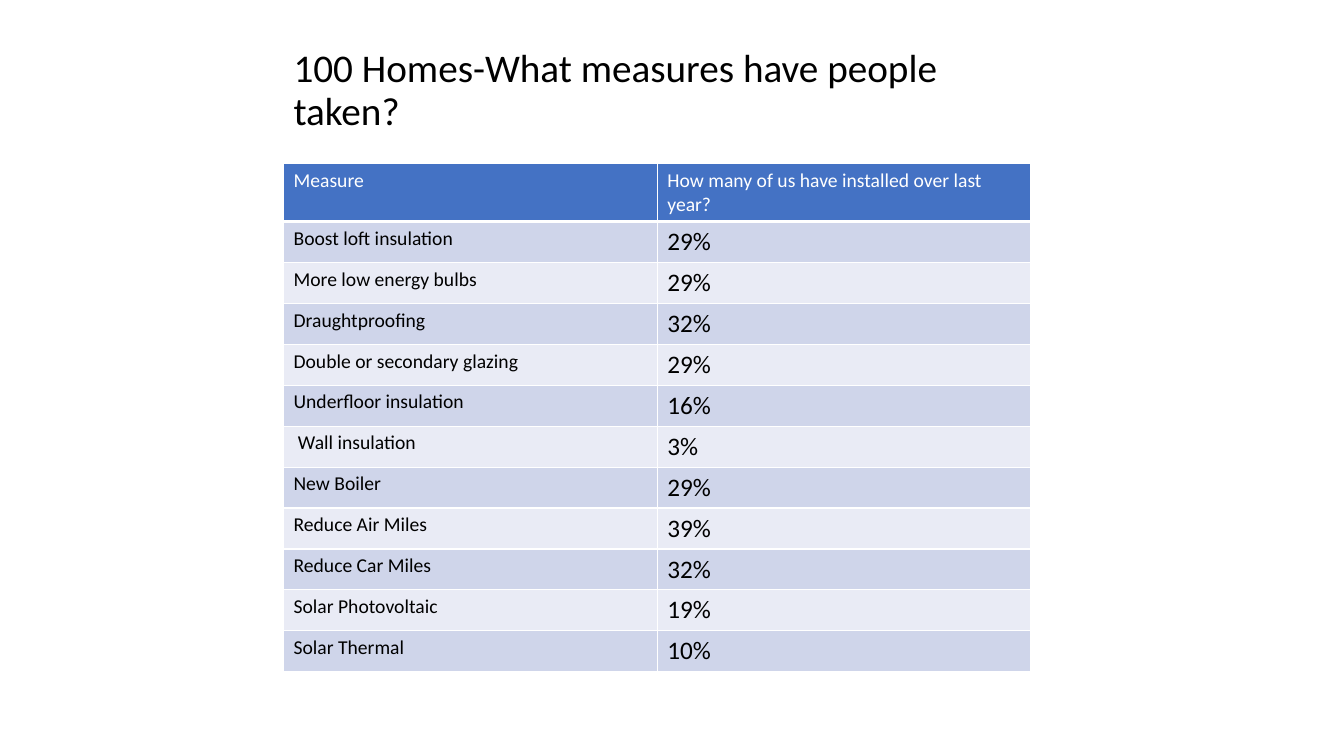
from dataclasses import dataclass

from lxml import etree
from pptx import Presentation
from pptx.dml.color import RGBColor
from pptx.enum.text import MSO_ANCHOR, MSO_AUTO_SIZE, PP_ALIGN
from pptx.oxml.ns import qn
from pptx.util import Emu, Pt

LEFT = PP_ALIGN.LEFT
TOP, MIDDLE = MSO_ANCHOR.TOP, MSO_ANCHOR.MIDDLE
NO_AUTOFIT = MSO_AUTO_SIZE.NONE

EMU_PER_PX = 9525
TITLE_ONLY = 5

TITLE = "100 Homes-What measures have people taken?"
HEADINGS = ("Measure", "How many of us have installed over last year?")
MEASURES = [
    ("Boost loft insulation", "29%"),
    ("More low energy bulbs", "29%"),
    ("Draughtproofing", "32%"),
    ("Double or secondary glazing", "29%"),
    ("Underfloor insulation", "16%"),
    (" Wall insulation", "3%"),
    ("New Boiler", "29%"),
    ("Reduce Air Miles", "39%"),
    ("Reduce Car Miles", "32%"),
    ("Solar Photovoltaic", "19%"),
    ("Solar Thermal", "10%"),
]


@dataclass(frozen=True)
class Theme:
    font: str = "Calibri"
    ink: str = "000000"
    white: str = "FFFFFF"
    header: str = "4472C4"
    bands: tuple = ("CFD5EA", "E9EBF5")
    title_size: int = 28
    label_size: int = 14
    value_size: int = 18
    rule: int = 1
    header_rule: int = 3


def px(length):
    return Emu(length * EMU_PER_PX)


def write_text(frame, text, *, font, size, color, spacing=1.0):
    para = frame.paragraphs[0]
    para.alignment = LEFT
    para.line_spacing = spacing
    span = para.add_run()
    span.text = text
    span.font.name = font
    span.font.size = Pt(size)
    span.font.bold = False
    span.font.color.rgb = RGBColor.from_string(color)


class SlideBuilder:
    def __init__(self, slide, theme):
        self.slide = slide
        self.theme = theme

    def title(self, text, left, top, width, height):
        box = self.slide.shapes.title
        box.left, box.top, box.width, box.height = map(px, (left, top, width, height))
        frame = box.text_frame
        frame.word_wrap = True
        frame.auto_size = NO_AUTOFIT
        frame.vertical_anchor = MIDDLE
        write_text(frame, text, font=self.theme.font, size=self.theme.title_size,
                   color=self.theme.ink, spacing=0.9)

    def table(self, headings, records, left, top, column_width, header_height, row_height):
        theme = self.theme
        heights = [header_height] + [row_height] * len(records)
        table = self.slide.shapes.add_table(
            len(heights), len(headings), px(left), px(top),
            px(column_width * len(headings)), px(sum(heights))).table
        for column in table.columns:
            column.width = px(column_width)
        for row, height in zip(table.rows, heights):
            row.height = px(height)

        # Header row
        for index, text in enumerate(headings):
            self.cell(table.cell(0, index), text, theme.label_size, theme.white,
                      theme.header, theme.header_rule)

        # Banded body rows
        sizes = (theme.label_size, theme.value_size)
        for number, record in enumerate(records):
            band = theme.bands[number % 2]
            for index, (text, size) in enumerate(zip(record, sizes)):
                self.cell(table.cell(number + 1, index), text, size, theme.ink,
                          band, theme.rule)

    def cell(self, cell, text, size, color, fill, bottom_rule):
        cell.vertical_anchor = TOP
        write_text(cell.text_frame, text, font=self.theme.font, size=size, color=color)
        rule = self.theme.rule
        for side, weight in (("L", rule), ("R", rule), ("T", rule), ("B", bottom_rule)):
            self.border(cell, side, weight)
        cell.fill.solid()
        cell.fill.fore_color.rgb = RGBColor.from_string(fill)

    def border(self, cell, side, weight):
        properties = cell._tc.get_or_add_tcPr()
        line = etree.SubElement(properties, qn(f"a:ln{side}"), w=str(Pt(weight)))
        paint = etree.SubElement(line, qn("a:solidFill"))
        etree.SubElement(paint, qn("a:srgbClr"), val=self.theme.white)


def main():
    deck = Presentation()
    deck.slide_width, deck.slide_height = px(1280), px(720)
    page = deck.slides.add_slide(deck.slide_layouts[TITLE_ONLY])
    builder = SlideBuilder(page, Theme())

    builder.title(TITLE, 270, 27, 737, 120)
    builder.table(HEADINGS, MEASURES, left=270, top=156, column_width=356,
                  header_height=55, row_height=39)

    deck.save("out.pptx")


if __name__ == "__main__":
    main()
